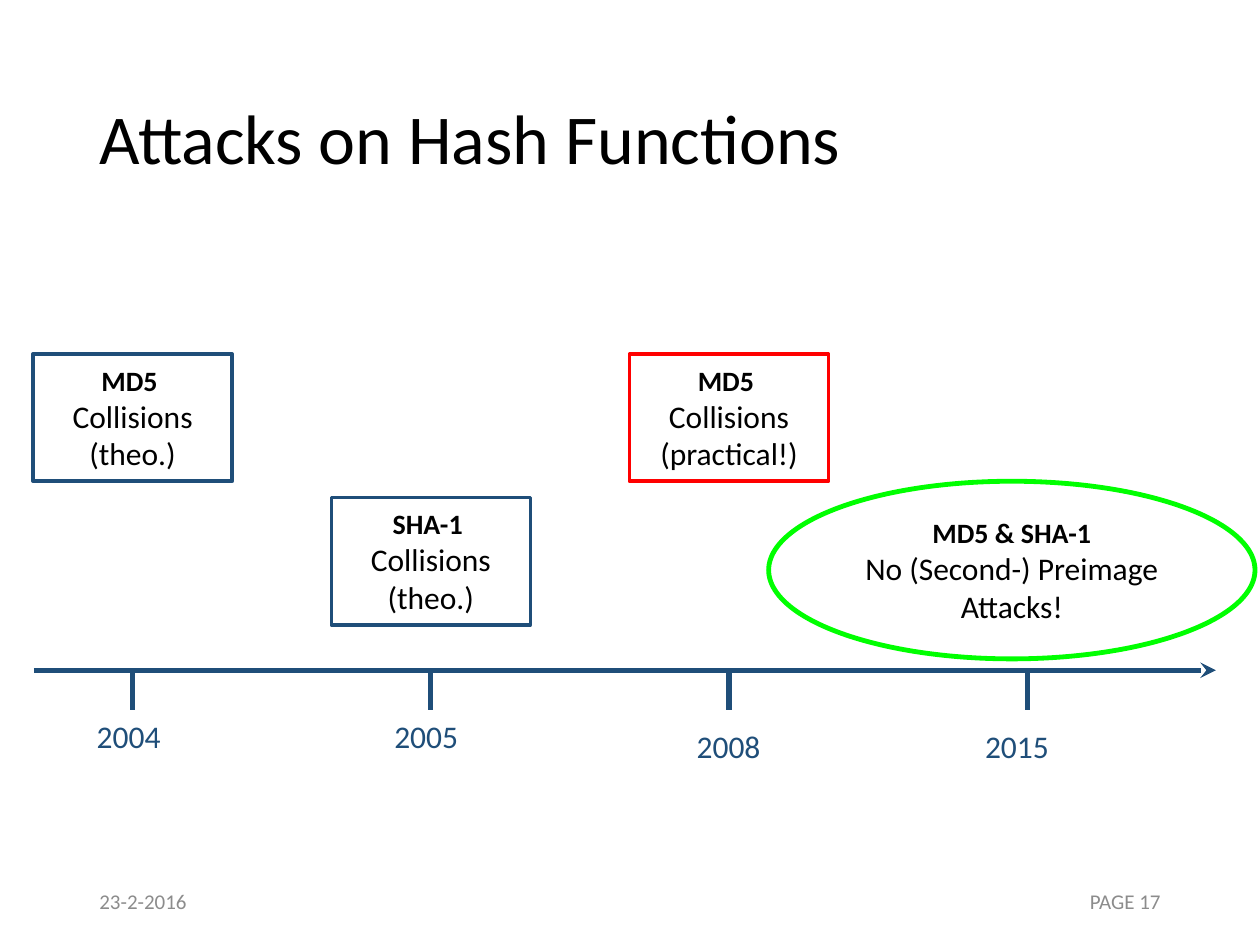
from lxml import etree
from pptx import Presentation
from pptx.dml.color import RGBColor
from pptx.enum import shapes, text
from pptx.oxml import ns
from pptx.util import Pt

BLACK = RGBColor(0x00, 0x00, 0x00)
GRAY = RGBColor(0x8C, 0x8C, 0x8C)
NAVY = RGBColor(0x1F, 0x4E, 0x79)
RED = RGBColor(0xFF, 0x00, 0x00)
GREEN = RGBColor(0x00, 0xFF, 0x00)
LEFT, CENTER, RIGHT = text.PP_ALIGN.LEFT, text.PP_ALIGN.CENTER, text.PP_ALIGN.RIGHT
TOP, MIDDLE = text.MSO_ANCHOR.TOP, text.MSO_ANCHOR.MIDDLE
RECTANGLE, OVAL = shapes.MSO_SHAPE.RECTANGLE, shapes.MSO_SHAPE.OVAL

# Content
TITLE = "Attacks on Hash Functions"
# Text, left, alignment
FOOTERS = [("23-2-2016", 49.7, LEFT), ("PAGE 17", 508.3, RIGHT)]
# Year, label left, label top
YEARS = [("2004", 48.2, 406), ("2005", 218.2, 406),
         ("2008", 391, 411.8), ("2015", 555.8, 411.8)]
# Kind, centre x, top, width, height, line colour, line width, heading, lines
BOX = (113.8, 72.7)
TICK_START, TICK_STEP, TICK_LENGTH = 75.8, 170.4, 23
TICKS = [TICK_START + i * TICK_STEP for i in range(len(YEARS))]
EVENTS = [
    (RECTANGLE, TICKS[0], 202.3, *BOX, NAVY, 2, "MD5 ", ["Collisions", "(theo.)"]),
    (RECTANGLE, TICKS[1], 284.4, *BOX, NAVY, 2, "SHA-1 ", ["Collisions", "(theo.)"]),
    (RECTANGLE, TICKS[2], 202.3, *BOX, RED, 2, "MD5 ", ["Collisions", "(practical!)"]),
    (OVAL, 578.2, 275, 277.9, 101.5, GREEN, 2.75, "MD5 & SHA-1",
     ["No (Second-) Preimage Attacks!"]),
]
AXIS_LEFT, AXIS_RIGHT, AXIS_Y = 19.4, 694.8, 383


def write(shape, lines, align=LEFT, anchor=TOP):
    """Fill a shape with (text, size, colour, bold) lines."""
    frame = shape.text_frame
    frame.word_wrap = True
    frame.vertical_anchor = anchor
    for index, (words, size, color, bold) in enumerate(lines):
        paragraph = frame.add_paragraph() if index else frame.paragraphs[0]
        paragraph.alignment = align
        run = paragraph.add_run()
        run.text = words
        for name, value in dict(name="Calibri", size=Pt(size), bold=bold).items():
            setattr(run.font, name, value)
        run.font.color.rgb = color


def add_label(slide, words, left, top, width, height, size, color, **layout):
    box = slide.shapes.add_textbox(Pt(left), Pt(top), Pt(width), Pt(height))
    write(box, [(words, size, color, False)], **layout)


def add_line(slide, x1, y1, x2, y2, arrow=False):
    line = slide.shapes.add_connector(
        shapes.MSO_CONNECTOR.STRAIGHT, Pt(x1), Pt(y1), Pt(x2), Pt(y2))
    line.line.color.rgb = NAVY
    line.line.width = Pt(3)
    if arrow:
        outline = line.line._get_or_add_ln()
        etree.SubElement(outline, ns.qn("a:tailEnd"), type="stealth")
    etree.SubElement(line._element.spPr, ns.qn("a:effectLst"))


def add_event(slide, kind, center, top, width, height, color, weight, heading, lines):
    shape = slide.shapes.add_shape(
        kind, Pt(center - width / 2), Pt(top), Pt(width), Pt(height))
    shape.shadow.inherit = False
    shape.fill.background()
    shape.line.color.rgb = color
    shape.line.width = Pt(weight)
    content = [(heading, 16, BLACK, True)]
    content += [(line, 18, BLACK, False) for line in lines]
    write(shape, content, CENTER, MIDDLE)


def main():
    presentation = Presentation()
    presentation.slide_width, presentation.slide_height = Pt(720), Pt(540)
    slide = presentation.slides.add_slide(presentation.slide_layouts[5])

    # Title
    title = slide.shapes.title
    place = dict(left=49.7, top=28.8, width=620.6, height=104.4)
    for name, value in place.items():
        setattr(title, name, Pt(value))
    write(title, [(TITLE, 40, BLACK, False)], LEFT, MIDDLE)
    title.text_frame.paragraphs[0].line_spacing = 0.9

    # Date and page number
    for words, left, align in FOOTERS:
        add_label(slide, words, left, 500.4, 162, 28.8, 12, GRAY,
                  align=align, anchor=MIDDLE)

    # Time axis with ticks and years
    add_line(slide, AXIS_LEFT, AXIS_Y, AXIS_RIGHT, AXIS_Y, arrow=True)
    for x, (year, left, top) in zip(TICKS, YEARS):
        add_line(slide, x, AXIS_Y, x, AXIS_Y + TICK_LENGTH)
        add_label(slide, year, left, top, 65.5, 28.8, 18, NAVY)

    # Attacks
    for event in EVENTS:
        add_event(slide, *event)

    presentation.save("out.pptx")


if __name__ == "__main__":
    main()
